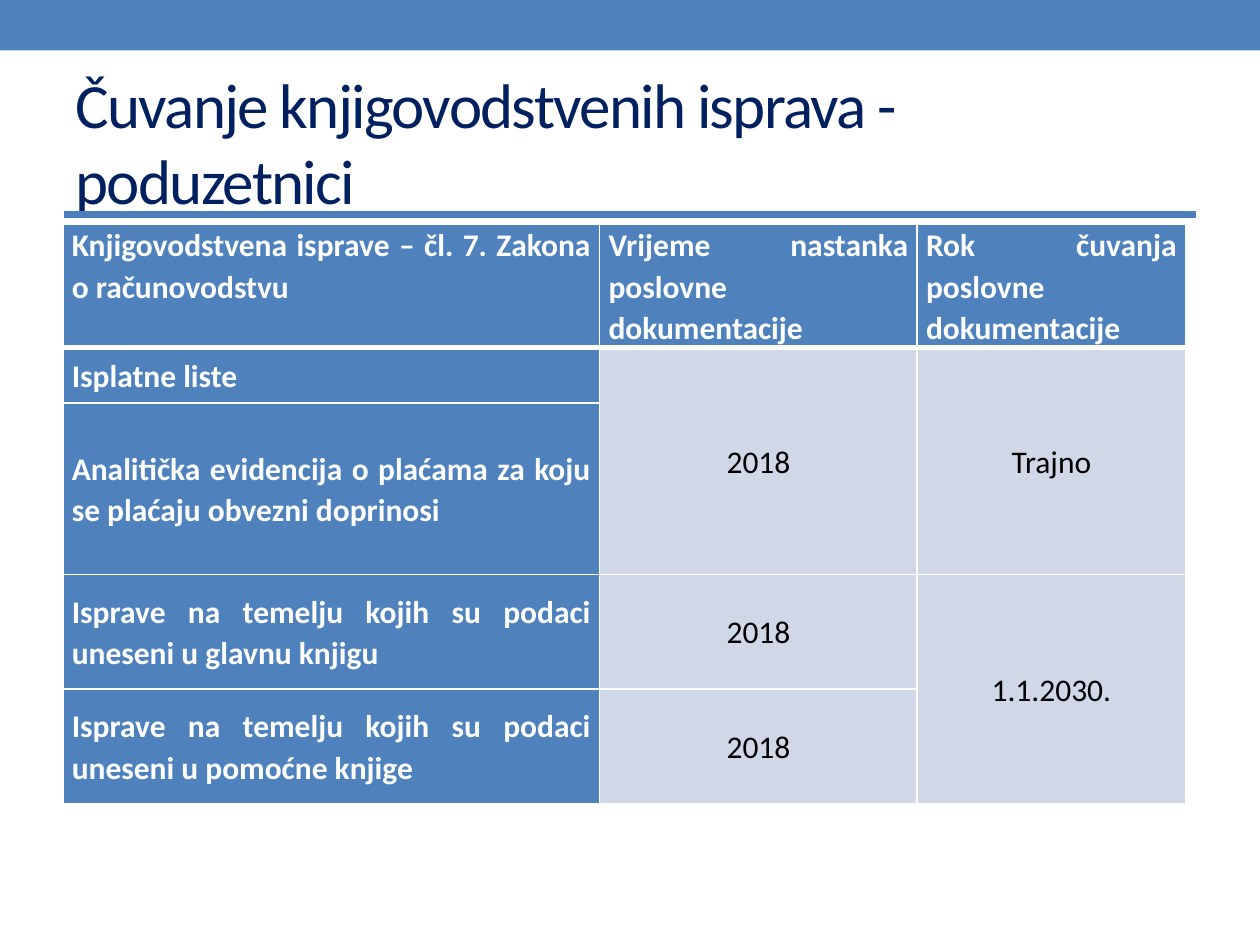
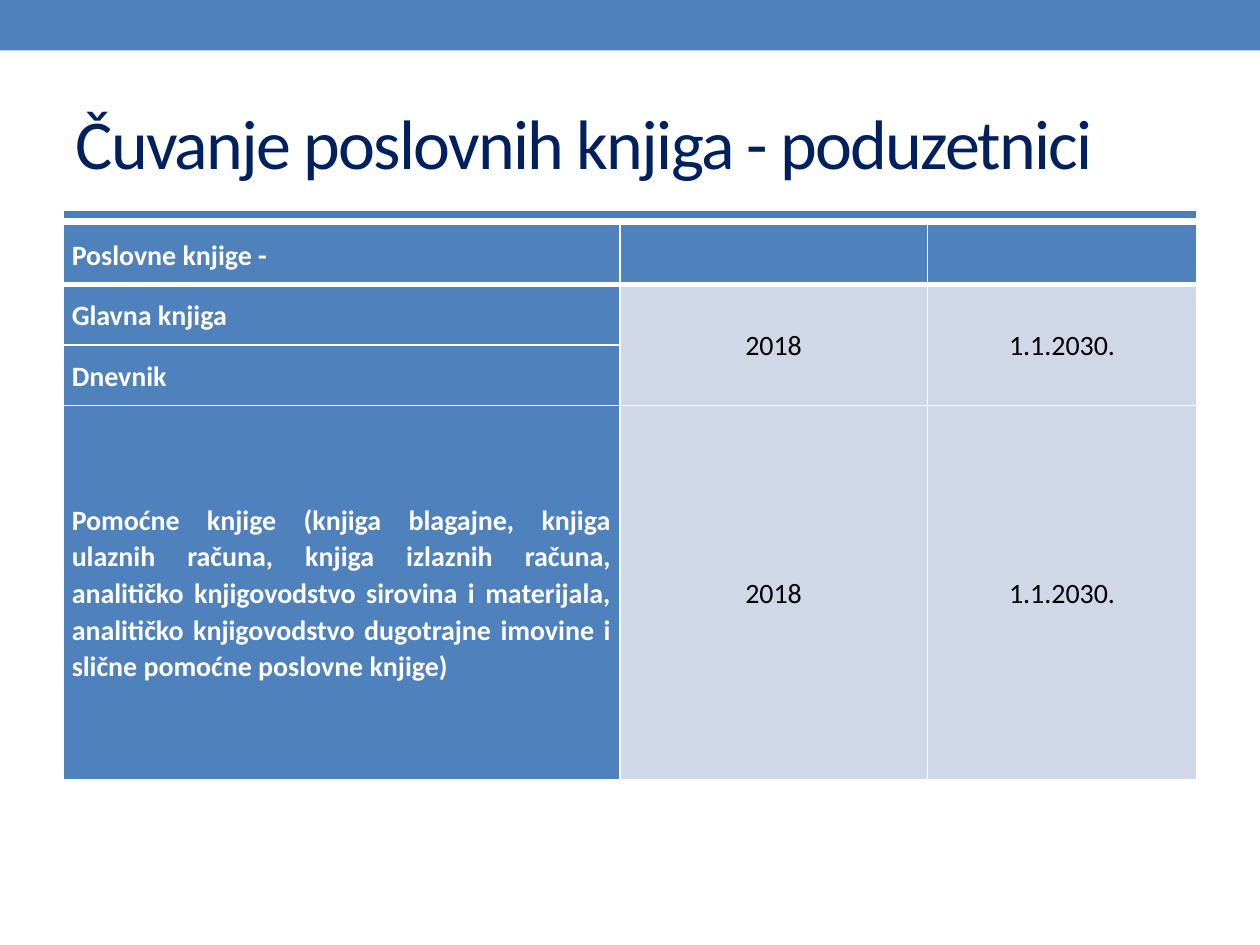
from dataclasses import dataclass
from itertools import takewhile

from lxml.etree import SubElement
from pptx import Presentation
from pptx.dml.color import RGBColor
from pptx.enum.shapes import MSO_CONNECTOR, MSO_SHAPE
from pptx.enum.text import MSO_ANCHOR as Anchor, MSO_AUTO_SIZE, PP_ALIGN as Align
from pptx.oxml import parse_xml
from pptx.oxml.ns import nsdecls, qn
from pptx.slide import Slide
from pptx.table import Table, _Cell as Cell
from pptx.util import Inches, Pt


@dataclass(frozen=True)
class Theme:
    font: str = "Calibri"
    band: RGBColor = RGBColor(0x4F, 0x81, 0xBD)
    rule: RGBColor = RGBColor(0x4B, 0x7E, 0xBC)
    title: RGBColor = RGBColor(0x00, 0x20, 0x60)
    value_fill: RGBColor = RGBColor(0xD0, 0xD8, 0xE8)
    value_text: RGBColor = RGBColor(0x00, 0x00, 0x00)
    white: RGBColor = RGBColor(0xFF, 0xFF, 0xFF)
    rule_width: int = 4
    grid_width: int = 1
    header_width: int = 3


@dataclass(frozen=True)
class RetentionPage:
    title: str
    title_size: int
    text_size: int
    header_anchor: Anchor
    columns: tuple[float, ...]
    heights: tuple[float, ...]
    rows: tuple[tuple[str | None, ...], ...]


THEME = Theme()
MERGED = None

PAGES = (
    RetentionPage(
        title="Čuvanje knjigovodstvenih isprava - poduzetnici",
        title_size=36,
        text_size=18,
        header_anchor=Anchor.TOP,
        columns=(4.26, 2.52, 2.13),
        heights=(0.97, 0.44, 1.36, 0.91, 0.91),
        rows=(
            ("Knjigovodstvena isprave – čl. 7. Zakona o računovodstvu",
             "Vrijeme nastanka poslovne dokumentacije",
             "Rok čuvanja poslovne dokumentacije"),
            ("Isplatne liste", "2018", "Trajno"),
            ("Analitička evidencija o plaćama za koju se plaćaju obvezni doprinosi",
             MERGED, MERGED),
            ("Isprave na temelju kojih su podaci uneseni u glavnu knjigu",
             "2018", "1.1.2030."),
            ("Isprave na temelju kojih su podaci uneseni u pomoćne knjige",
             "2018", MERGED),
        ),
    ),
    RetentionPage(
        title="Čuvanje poslovnih knjiga - poduzetnici",
        title_size=40,
        text_size=16,
        header_anchor=Anchor.MIDDLE,
        columns=(4.42, 2.44, 2.14),
        heights=(0.48, 0.48, 0.48, 2.97),
        rows=(
            ("Poslovne knjige -", "", ""),
            ("Glavna knjiga", "2018", "1.1.2030."),
            ("Dnevnik", MERGED, MERGED),
            ("Pomoćne knjige (knjiga blagajne, knjiga ulaznih računa, knjiga izlaznih "
             "računa, analitičko knjigovodstvo sirovina i materijala, analitičko "
             "knjigovodstvo dugotrajne imovine i slične pomoćne poslovne knjige)",
             "2018", "1.1.2030."),
        ),
    ),
)


def draw_frame(page: Slide) -> None:
    band = page.shapes.add_shape(
        MSO_SHAPE.RECTANGLE, Inches(0), Inches(0), Inches(10), Inches(0.4))
    band.shadow.inherit = False
    band.fill.solid()
    band.fill.fore_color.rgb = THEME.band
    band.line.fill.background()

    rule = page.shapes.add_connector(
        MSO_CONNECTOR.STRAIGHT, Inches(0.51), Inches(1.7), Inches(9.49), Inches(1.7))
    rule.line.color.rgb = THEME.rule
    rule.line.width = Pt(THEME.rule_width)
    SubElement(rule.element.spPr, qn("a:effectLst"))


def write_title(page: Slide, text: str, size: int) -> None:
    box = page.shapes.title
    box.left, box.top = Inches(0.5), Inches(0.58)
    box.width, box.height = Inches(9), Inches(1.08)
    frame = box.text_frame
    frame.word_wrap = True
    frame.auto_size = MSO_AUTO_SIZE.NONE
    frame.vertical_anchor = Anchor.MIDDLE
    para = frame.paragraphs[0]
    para.alignment = Align.LEFT
    span = para.add_run()
    span.text = text
    span.font.name = THEME.font
    span.font.size = Pt(size)
    span.font.color.rgb = THEME.title
    span.font._element.set("spc", "-100")


def draw_borders(cell: Cell, top: int, bottom: int) -> None:
    properties = cell._tc.get_or_add_tcPr()
    widths = {"lnL": THEME.grid_width, "lnR": THEME.grid_width,
              "lnT": top, "lnB": bottom}
    for position, (side, width) in enumerate(widths.items()):
        properties.insert(position, parse_xml(
            f'<a:{side} {nsdecls("a")} w="{Pt(width)}"><a:solidFill>'
            f'<a:srgbClr val="{THEME.white}"/></a:solidFill></a:{side}>'))


def write_cell(cell: Cell, text: str, size: int, is_label: bool) -> None:
    para = cell.text_frame.paragraphs[0]
    para.alignment = Align.JUSTIFY if is_label else Align.CENTER
    para.line_spacing = 1.07
    para.space_after = Pt(8)
    span = para.add_run()
    span.text = text
    span.font.name = THEME.font
    span.font.size = Pt(size)
    span.font.bold = is_label
    span.font.color.rgb = THEME.white if is_label else THEME.value_text


def merge_down(table: Table, rows: tuple, row: int, column: int) -> None:
    below = [line[column] for line in rows[row + 1:]]
    extra = len(list(takewhile(lambda text: text is MERGED, below)))
    if extra:
        table.cell(row, column).merge(table.cell(row + extra, column))


def draw_table(page: Slide, content: RetentionPage) -> None:
    table = page.shapes.add_table(
        len(content.rows), len(content.columns), Inches(0.5), Inches(1.78),
        Inches(sum(content.columns)), Inches(sum(content.heights))).table
    for column, width in zip(table.columns, content.columns):
        column.width = Inches(width)
    for row, height in zip(table.rows, content.heights):
        row.height = Inches(height)

    for row, texts in enumerate(content.rows):
        for column, text in enumerate(texts):
            cell = table.cell(row, column)
            is_label = row == 0 or column == 0
            cell.fill.solid()
            cell.fill.fore_color.rgb = THEME.band if is_label else THEME.value_fill
            cell.margin_left = cell.margin_right = Inches(0.07)
            cell.margin_top = cell.margin_bottom = Inches(0)
            cell.vertical_anchor = content.header_anchor if row == 0 else Anchor.MIDDLE
            draw_borders(
                cell,
                top=THEME.header_width if row == 1 else THEME.grid_width,
                bottom=THEME.header_width if row == 0 else THEME.grid_width)
            if text:
                write_cell(cell, text, content.text_size, is_label)
                merge_down(table, content.rows, row, column)


def main() -> None:
    deck = Presentation()
    deck.slide_width, deck.slide_height = Inches(10), Inches(7.5)
    title_only = deck.slide_layouts[5]
    for content in PAGES:
        page = deck.slides.add_slide(title_only)
        draw_frame(page)
        write_title(page, content.title, content.title_size)
        draw_table(page, content)
    deck.save("out.pptx")


if __name__ == "__main__":
    main()
